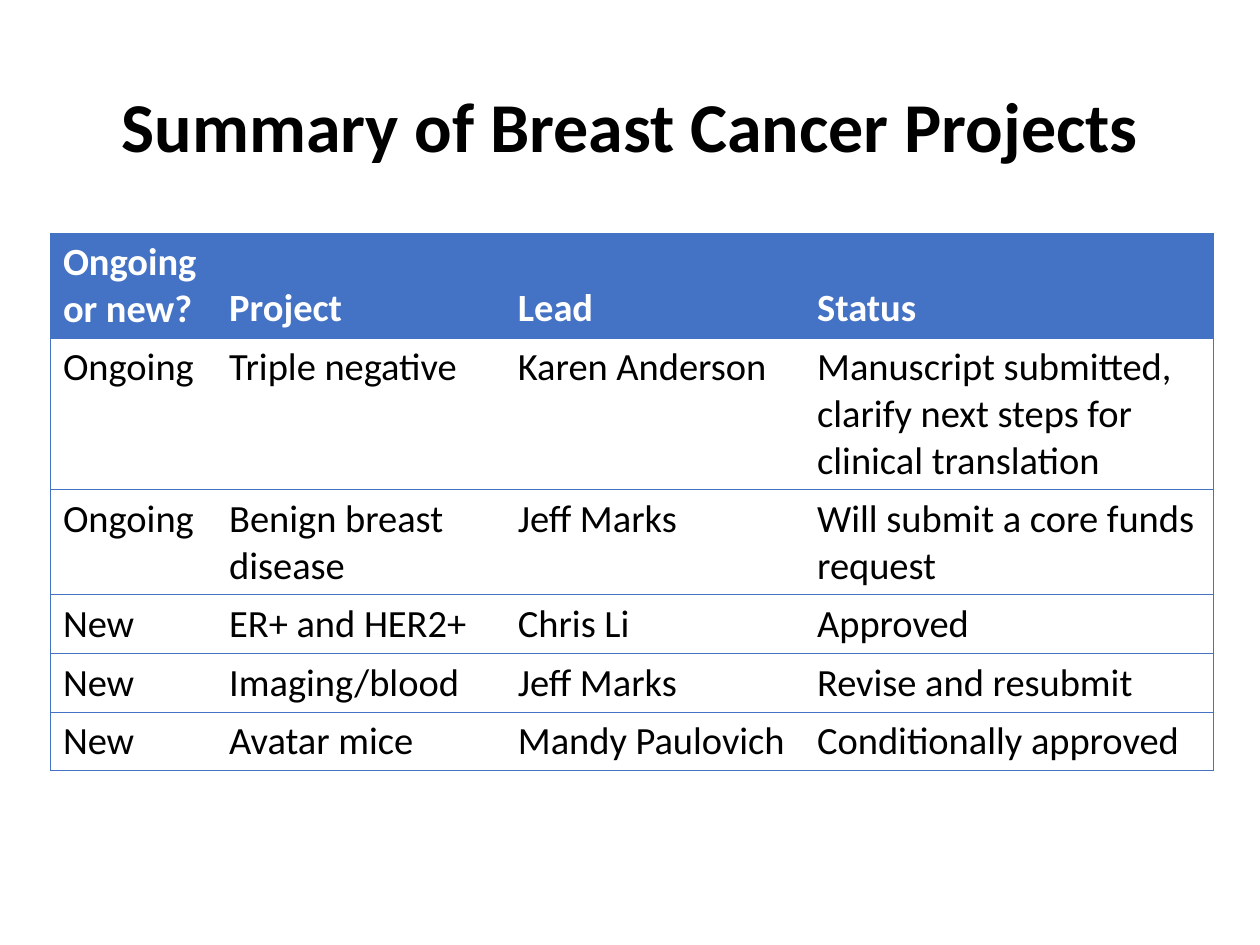
from dataclasses import dataclass

from lxml import etree
from pptx import Presentation
from pptx.dml.color import RGBColor
from pptx.enum import text
from pptx.oxml import ns
from pptx.util import Pt


@dataclass(frozen=True)
class Theme:
    font: str = "Calibri"
    ink: str = "000000"
    light: str = "FFFFFF"
    accent: str = "4472C4"
    title: float = 40
    body: float = 22
    rule: float = 0.5


THEME = Theme()
TITLE = "Summary of Breast Cancer Projects"
WIDTHS = (95, 165, 171, 233.5)
ROW = 29.6
ROWS = (
    ("Ongoing or new?", "Project", "Lead", "Status"),
    ("Ongoing", "Triple negative", "Karen Anderson",
     "Manuscript submitted, clarify next steps for clinical translation"),
    ("Ongoing", "Benign breast disease", "Jeff Marks",
     "Will submit a core funds request"),
    ("New", "ER+ and HER2+", "Chris Li", "Approved"),
    ("New", "Imaging/blood", "Jeff Marks", "Revise and resubmit"),
    ("New", "Avatar mice", "Mandy Paulovich", "Conditionally approved"),
)


def add_run(para, words, size, color, bold):
    run = para.add_run()
    run.text = words
    font = run.font
    font.name, font.size, font.bold = THEME.font, Pt(size), bold
    font.color.rgb = RGBColor.from_string(color)


def set_rules(cell, shown):
    """Draw the sides named in shown (of L, R, T, B) and clear the others."""
    props = cell._tc.get_or_add_tcPr()
    for index, side in enumerate("LRTB"):
        line = etree.Element(ns.qn(f"a:ln{side}"), w=str(Pt(THEME.rule)))
        if side in shown:
            fill = etree.SubElement(line, ns.qn("a:solidFill"))
            etree.SubElement(fill, ns.qn("a:srgbClr"), val=THEME.accent)
        else:
            etree.SubElement(line, ns.qn("a:noFill"))
        props.insert(index, line)


def add_title(slide, left, top, width, height):
    frame = slide.shapes.add_textbox(
        Pt(left), Pt(top), Pt(width), Pt(height)).text_frame
    frame.word_wrap = True
    frame.vertical_anchor = text.MSO_ANCHOR.MIDDLE
    para = frame.paragraphs[0]
    para.alignment = text.PP_ALIGN.CENTER
    para.line_spacing = 0.9
    add_run(para, TITLE, THEME.title, THEME.ink, True)


def fill_cell(cell, words, head, sides):
    if head:
        cell.fill.solid()
        cell.fill.fore_color.rgb = RGBColor.from_string(THEME.accent)
    else:
        cell.fill.background()
    cell.vertical_anchor = (
        text.MSO_ANCHOR.BOTTOM if head else text.MSO_ANCHOR.TOP)
    color = THEME.light if head else THEME.ink
    add_run(cell.text_frame.paragraphs[0], words, THEME.body, color, head)
    set_rules(cell, sides)


def add_projects(slide, left, top, width, height):
    """Place the project table; rows grow to fit their wrapped text."""
    frame = slide.shapes.add_table(
        len(ROWS), len(WIDTHS), Pt(left), Pt(top), Pt(width), Pt(height))
    table = frame.table
    table.horz_banding = False
    for col, share in zip(table.columns, WIDTHS):
        col.width = Pt(width * share / sum(WIDTHS))
    last = len(WIDTHS) - 1
    for r, row in enumerate(ROWS):
        table.rows[r].height = Pt(ROW)
        for c, words in enumerate(row):
            sides = "TB" + "L" * (c == 0) + "R" * (c == last)
            fill_cell(table.cell(r, c), words, r == 0, sides)
    frame.height = Pt(height)


def main():
    deck = Presentation()
    deck.slide_width, deck.slide_height = Pt(720), Pt(540)
    slide = deck.slides.add_slide(deck.slide_layouts[6])
    add_title(slide, 49.5, 28.75, 621, 91.5)
    add_projects(slide, 28.8, 133.2, 664.5, 307.4)
    deck.save("out.pptx")


if __name__ == "__main__":
    main()
